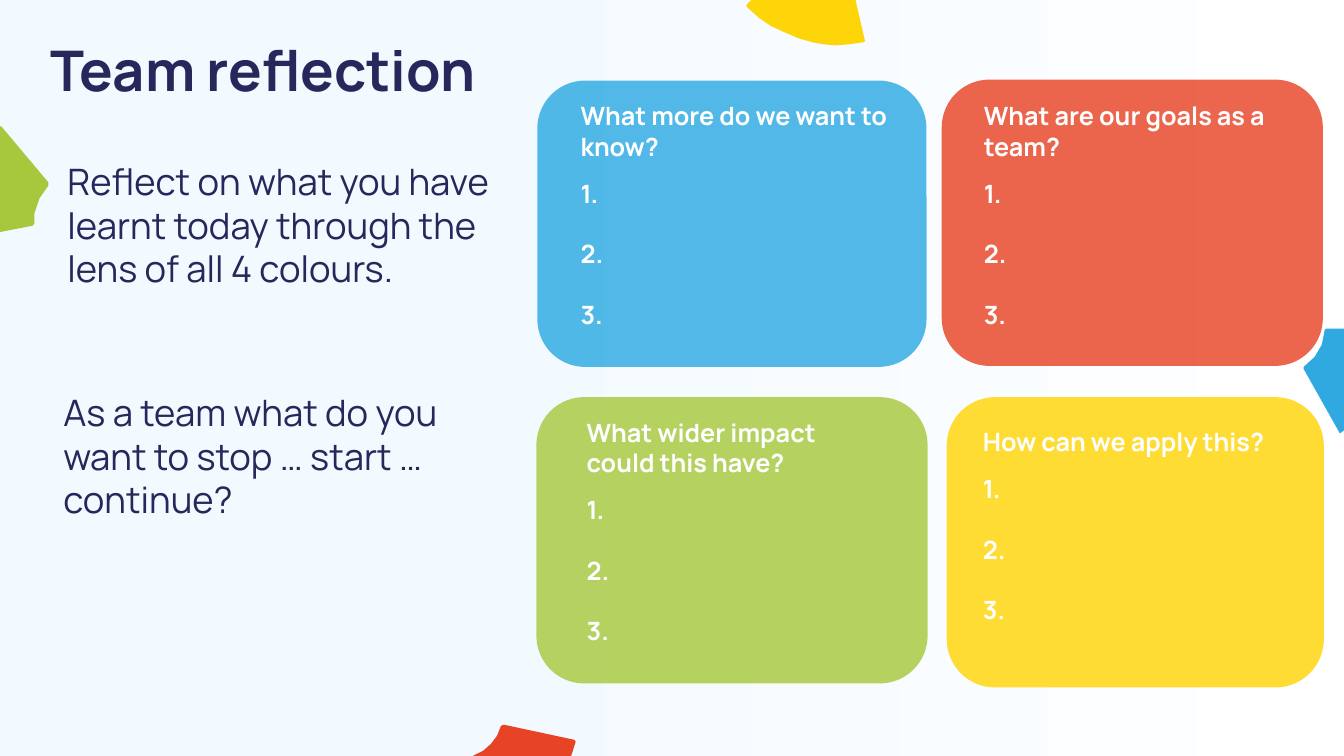
"""Build the team reflection slide with four coloured question cards."""
from lxml import etree
from pptx import Presentation
from pptx.dml.color import RGBColor
from pptx.enum.shapes import MSO_SHAPE
from pptx.oxml.ns import qn
from pptx.util import Inches, Pt

RECTANGLE = MSO_SHAPE.RECTANGLE
ROUNDED_RECTANGLE = MSO_SHAPE.ROUNDED_RECTANGLE

WHITE = RGBColor(0xFF, 0xFF, 0xFF)
PALE_BLUE = RGBColor(0xF3, 0xFA, 0xFF)
NAVY = RGBColor(0x28, 0x26, 0x5B)
CARD_BLUE = RGBColor(0x2D, 0xAA, 0xE2)
CARD_RED = RGBColor(0xE8, 0x44, 0x27)
CARD_GREEN = RGBColor(0xA7, 0xC9, 0x3F)
CARD_YELLOW = RGBColor(0xFF, 0xD5, 0x08)
PIECE_GREEN = RGBColor(0xA7, 0xC8, 0x3D)
PIECE_RED = RGBColor(0xE7, 0x44, 0x26)
PIECE_YELLOW = RGBColor(0xFE, 0xD5, 0x08)
PIECE_BLUE = RGBColor(0x30, 0xA9, 0xE0)

FONT = "Manrope"
CARD_ALPHA = 82
LIST_INDENT = Inches(0.38)
LIST_LENGTH = 3

CARDS = [
    ("What more do we want to know?", CARD_BLUE,
     (5.33, 0.8, 3.86, 2.84), (5.66, 0.95, 3.5, 2.39)),
    ("What are our goals as a team?", CARD_RED,
     (9.34, 0.79, 3.78, 2.84), (9.66, 0.95, 3.47, 2.46)),
    ("What wider impact could this have?", CARD_GREEN,
     (5.32, 3.94, 3.88, 2.84), (5.72, 4.09, 3.16, 2.39)),
    ("How can we apply this?", CARD_YELLOW,
     (9.39, 3.94, 3.74, 2.88), (9.65, 4.18, 3.44, 2.09)),
]

PIECES = [
    (PIECE_GREEN, [
        (0.01, 1.25), (0.48, 1.81), (0.48, 1.84), (0.39, 1.97), (0.34, 2.12),
        (0.34, 2.22), (0.32, 2.24), (-0.09, 2.32), (-0.38, 2.37),
        (-0.4, 2.35), (-0.41, 2.08), (-0.35, 1.82), (-0.26, 1.6),
        (-0.13, 1.4), (-0.04, 1.3)]),
    (PIECE_RED, [
        (5.44, 7.87), (5.19, 8.09), (4.9, 8.23), (4.88, 8.22), (4.74, 7.72),
        (4.68, 7.53), (4.69, 7.5), (4.79, 7.45), (4.87, 7.38), (4.93, 7.3),
        (4.97, 7.2), (5, 7.19), (5.7, 7.34), (5.71, 7.36), (5.65, 7.55),
        (5.54, 7.74)]),
    (PIECE_YELLOW, [
        (7.92, 0.38), (7.78, 0.32), (7.65, 0.26), (7.53, 0.18), (7.42, 0.08),
        (7.4, 0.06), (7.42, 0.03), (7.75, -0.27), (7.94, -0.44),
        (7.97, -0.44), (8.09, -0.35), (8.23, -0.31), (8.39, -0.31),
        (8.41, -0.3), (8.48, -0.02), (8.58, 0.41), (8.56, 0.42),
        (8.42, 0.44), (8.28, 0.45), (8.17, 0.44), (8.06, 0.42)]),
    (PIECE_BLUE, [
        (13.33, 4.27), (13.4, 4.22), (13.53, 4.1), (13.65, 3.97),
        (13.78, 3.75), (13.86, 3.53), (13.9, 3.27), (13.88, 3.25),
        (13.4, 3.26), (13.16, 3.26), (13.14, 3.27), (13.11, 3.42),
        (13.04, 3.54), (12.93, 3.64), (12.93, 3.66), (13.2, 4.14),
        (13.29, 4.3)]),
]


def inches(values):
    """Convert a sequence of numbers to lengths."""
    return [Inches(value) for value in values]


def style_shape(shape, color):
    """Give a shape a flat fill with no outline or shadow."""
    shape.shadow.inherit = False
    shape.fill.solid()
    shape.fill.fore_color.rgb = color
    shape.line.fill.background()


def add_background(slide):
    """Add the full-slide fade from white at the right to pale blue."""
    shape = slide.shapes.add_shape(RECTANGLE, *inches((0, 0, 13.33, 7.5)))
    shape.shadow.inherit = False
    shape.line.fill.background()
    shape.fill.gradient()
    shape.fill.gradient_angle = 180
    stops = shape.fill.gradient_stops
    for stop, color, position in zip(stops, (WHITE, PALE_BLUE), (0, 0.66)):
        stop.color.rgb = color
        stop.position = position


def add_piece(slide, color, points):
    """Add a wheel piece outlined by points in inches."""
    corners = [inches(point) for point in points]
    builder = slide.shapes.build_freeform(*corners[0])
    builder.add_line_segments(corners[1:], close=True)
    style_shape(builder.convert_to_shape(), color)


def format_paragraph(paragraph, size, color, bold):
    """Set the font of every run in a paragraph."""
    for run in paragraph.runs:
        run.font.name = FONT
        run.font.size = Pt(size)
        run.font.bold = bold
        run.font.color.rgb = color


def add_text(slide, text, box, size, color, bold=False):
    """Add a wrapping text box and return its text frame."""
    text_frame = slide.shapes.add_textbox(*inches(box)).text_frame
    text_frame.word_wrap = True
    text_frame.text = text
    format_paragraph(text_frame.paragraphs[0], size, color, bold)
    return text_frame


def add_numbered_line(text_frame, space_before):
    """Add a numbered line that is ready to be filled in."""
    paragraph = text_frame.add_paragraph()
    paragraph.text = " "
    paragraph.space_before = Pt(space_before)
    properties = paragraph._p.get_or_add_pPr()
    properties.set("marL", str(LIST_INDENT))
    properties.set("indent", str(-LIST_INDENT))
    etree.SubElement(properties, qn("a:buAutoNum"), type="arabicPeriod")
    format_paragraph(paragraph, 18, WHITE, True)


def add_card(slide, question, color, card_box, text_box):
    """Add a translucent card with a question and a numbered list."""
    card = slide.shapes.add_shape(ROUNDED_RECTANGLE, *inches(card_box))
    style_shape(card, color)
    color_element = card.fill._xPr.find(qn("a:solidFill"))[0]
    etree.SubElement(color_element, qn("a:alpha"), val=str(CARD_ALPHA * 1000))
    text_frame = add_text(slide, question, text_box, 18, WHITE, True)
    for index in range(LIST_LENGTH):
        add_numbered_line(text_frame, 21.6 if index else 12)


def main():
    """Build and save the slide."""
    presentation = Presentation()
    presentation.slide_width = Inches(13.33)
    presentation.slide_height = Inches(7.5)
    slide = presentation.slides.add_slide(presentation.slide_layouts[6])
    add_background(slide)
    for color, points in PIECES:
        add_piece(slide, color, points)
    add_text(slide, "Team reflection", (0.4, 0.3, 6.15, 0.77), 40, NAVY, True)
    add_text(
        slide,
        "Reflect on what you have learnt today through the lens of all 4 colours.",
        (0.57, 1.53, 4.72, 1.85), 26, NAVY)
    for card in CARDS:
        add_card(slide, *card)
    add_text(slide, "As a team what do you want to stop … start … continue?",
             (0.53, 3.82, 4.53, 1.72), 26, NAVY)
    presentation.save("out.pptx")


if __name__ == "__main__":
    main()
